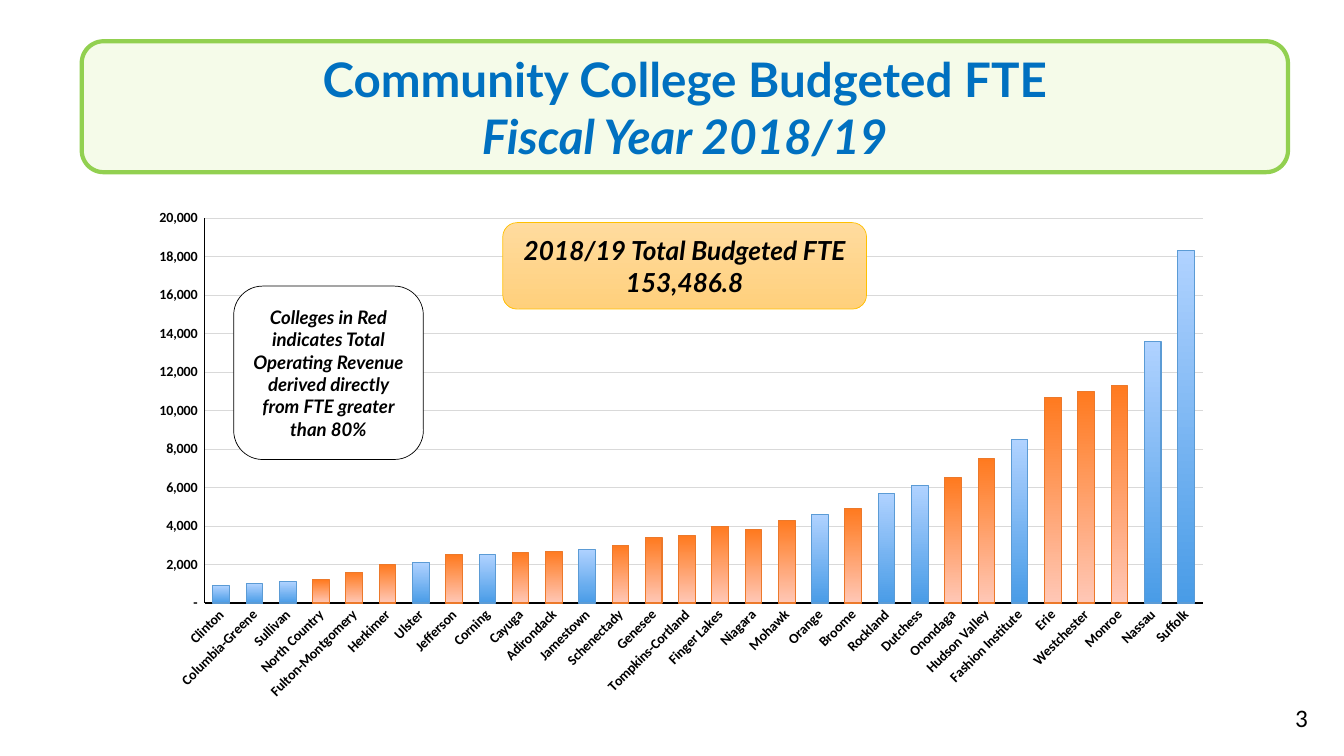
from lxml.etree import SubElement
from pptx import Presentation
from pptx.chart.data import CategoryChartData
from pptx.dml.color import RGBColor
from pptx.enum.chart import XL_CHART_TYPE, XL_TICK_MARK
from pptx.enum.shapes import MSO_SHAPE
from pptx.enum.text import MSO_ANCHOR, PP_ALIGN
from pptx.oxml.ns import qn
from pptx.util import Cm, Pt

ORANGE = ("FF7A1F", "FFC7B6")
BLUE = ("B0D2FF", "499CE7")
BUDGETED_FTE = {
    "Clinton": 900, "Columbia-Greene": 1000, "Sullivan": 1100,
    "North Country": 1200, "Fulton-Montgomery": 1600, "Herkimer": 2000,
    "Ulster": 2100, "Jefferson": 2500, "Corning": 2500, "Cayuga": 2600,
    "Adirondack": 2700, "Jamestown": 2800, "Schenectady": 3000,
    "Genesee": 3400, "Tompkins-Cortland": 3500, "Finger Lakes": 4000,
    "Niagara": 3800, "Mohawk": 4300, "Orange": 4600, "Broome": 4900,
    "Rockland": 5700, "Dutchess": 6100, "Onondaga": 6500,
    "Hudson Valley": 7500, "Fashion Institute": 8500, "Erie": 10700,
    "Westchester": 11000, "Monroe": 11300, "Nassau": 13600, "Suffolk": 18300,
}
BLUE_COLLEGES = {
    "Clinton", "Columbia-Greene", "Sullivan", "Ulster", "Corning", "Jamestown",
    "Orange", "Rockland", "Dutchess", "Fashion Institute", "Nassau", "Suffolk",
}


def color(value):
    return RGBColor.from_string(value)


def set_fill(fill, colors):
    """One colour gives a solid fill, two give a top-to-bottom gradient."""
    if len(colors) == 1:
        fill.solid()
        fill.fore_color.rgb = color(colors[0])
        return
    fill.gradient()
    fill.gradient_angle = 270
    for stop, value in zip(fill.gradient_stops, colors):
        stop.color.rgb = color(value)


def set_line(line, value, width):
    line.color.rgb = color(value)
    line.width = Pt(width)


def set_font(font, value, **formats):
    font.color.rgb = color(value)
    for name, setting in formats.items():
        setattr(font, name, setting)


def add_rounded_box(page, place, colors, outline, lines, value, size):
    """Each line is a pair of text and italic flag."""
    box = page.shapes.add_shape(
        MSO_SHAPE.ROUNDED_RECTANGLE, *[Cm(length) for length in place])
    box.shadow.inherit = False
    set_fill(box.fill, colors)
    set_line(box.line, *outline)
    frame = box.text_frame
    frame.word_wrap = True
    frame.vertical_anchor = MSO_ANCHOR.MIDDLE
    for index, (text, italic) in enumerate(lines):
        para = frame.add_paragraph() if index else frame.paragraphs[0]
        para.alignment = PP_ALIGN.CENTER
        span = para.add_run()
        span.text = text
        set_font(span.font, value, name="Lato", size=Pt(size), bold=True, italic=italic)


def add_page_number(page, place, text):
    box = page.shapes.add_textbox(*[Cm(length) for length in place])
    box.text_frame.word_wrap = True
    span = box.text_frame.paragraphs[0].add_run()
    span.text = text
    set_font(span.font, "000000", name="Calibri", size=Pt(18))


def set_plot_layout(chart, **fractions):
    plot_area = chart.plots[0]._element.getparent()
    for old in plot_area.findall(qn("c:layout")):
        plot_area.remove(old)
    layout = SubElement(plot_area, qn("c:layout"))
    plot_area.insert(0, layout)
    manual = SubElement(layout, qn("c:manualLayout"))
    settings = {"layoutTarget": "inner", "xMode": "edge", "yMode": "edge", **fractions}
    for name, setting in settings.items():
        SubElement(manual, qn(f"c:{name}")).set("val", str(setting))


def add_fte_chart(page, place):
    data = CategoryChartData()
    data.categories = BUDGETED_FTE.keys()
    data.add_series("Series 1", BUDGETED_FTE.values())
    chart = page.shapes.add_chart(
        XL_CHART_TYPE.COLUMN_CLUSTERED, *[Cm(length) for length in place], data).chart
    chart.has_legend = chart.has_title = False
    set_font(chart.font, "000000", name="Calibri", size=Pt(10), bold=True)
    set_plot_layout(chart, x=0.056, y=0.03, w=0.923, h=0.749)

    # Axes
    colleges, amounts = chart.category_axis, chart.value_axis
    for axis in (colleges, amounts):
        axis.major_tick_mark = axis.minor_tick_mark = XL_TICK_MARK.NONE
        set_line(axis.format.line, "000000", 0.75)
        set_font(axis.tick_labels.font, "000000", name="Calibri", size=Pt(10), bold=True)
    body = colleges._element.find(qn("c:txPr")).find(qn("a:bodyPr"))
    body.set("rot", "-2700000")
    body.set("vert", "horz")
    amounts.minimum_scale, amounts.maximum_scale, amounts.major_unit = 0, 20000, 2000
    amounts.tick_labels.number_format = '_(* #,##0_);_(* \\(#,##0\\);_(* "-"_);_(@_)'
    amounts.tick_labels.number_format_is_linked = False
    set_line(amounts.major_gridlines.format.line, "D9D9D9", 0.75)

    # Columns
    plot = chart.plots[0]
    plot.gap_width, plot.overlap, plot.vary_by_categories = 100, -24, False
    series = plot.series[0]
    series.invert_if_negative = False
    set_fill(series.format.fill, ORANGE)
    set_line(series.format.line, "EC792B", 0.75)
    for index, college in enumerate(BUDGETED_FTE):
        if college in BLUE_COLLEGES:
            column = series.points[index].format
            set_fill(column.fill, BLUE)
            set_line(column.line, "5B9BD5", 0.75)


def main():
    deck = Presentation()
    deck.slide_width, deck.slide_height = Cm(33.87), Cm(19.05)
    page = deck.slides.add_slide(deck.slide_layouts[6])

    add_fte_chart(page, (3.63, 5.11, 27.25, 12.95))
    # Title
    add_rounded_box(
        page, (2.06, 1.04, 30.4, 3.3), ("F5FBE9",), ("92D050", 3),
        [("Community College Budgeted FTE", False), ("Fiscal Year 2018/19", True)],
        "0070C0", 34)
    # Note and total over the chart
    add_rounded_box(
        page, (5.89, 7.21, 4.78, 4.37), ("FFFFFF",), ("000000", 0.5),
        [("Colleges in Red indicates Total Operating Revenue derived directly "
          "from FTE greater than 80%", True)], "000000", 13.3)
    add_rounded_box(
        page, (12.67, 5.61, 9.17, 2.18), ("FFDB9E", "FFD07C"), ("FFC000", 0.5),
        [("2018/19 Total Budgeted FTE 153,486.8", True)], "000000", 18.7)
    add_page_number(page, (32.39, 17.58, 0.66, 1.02), "3")
    deck.save("out.pptx")


if __name__ == "__main__":
    main()
